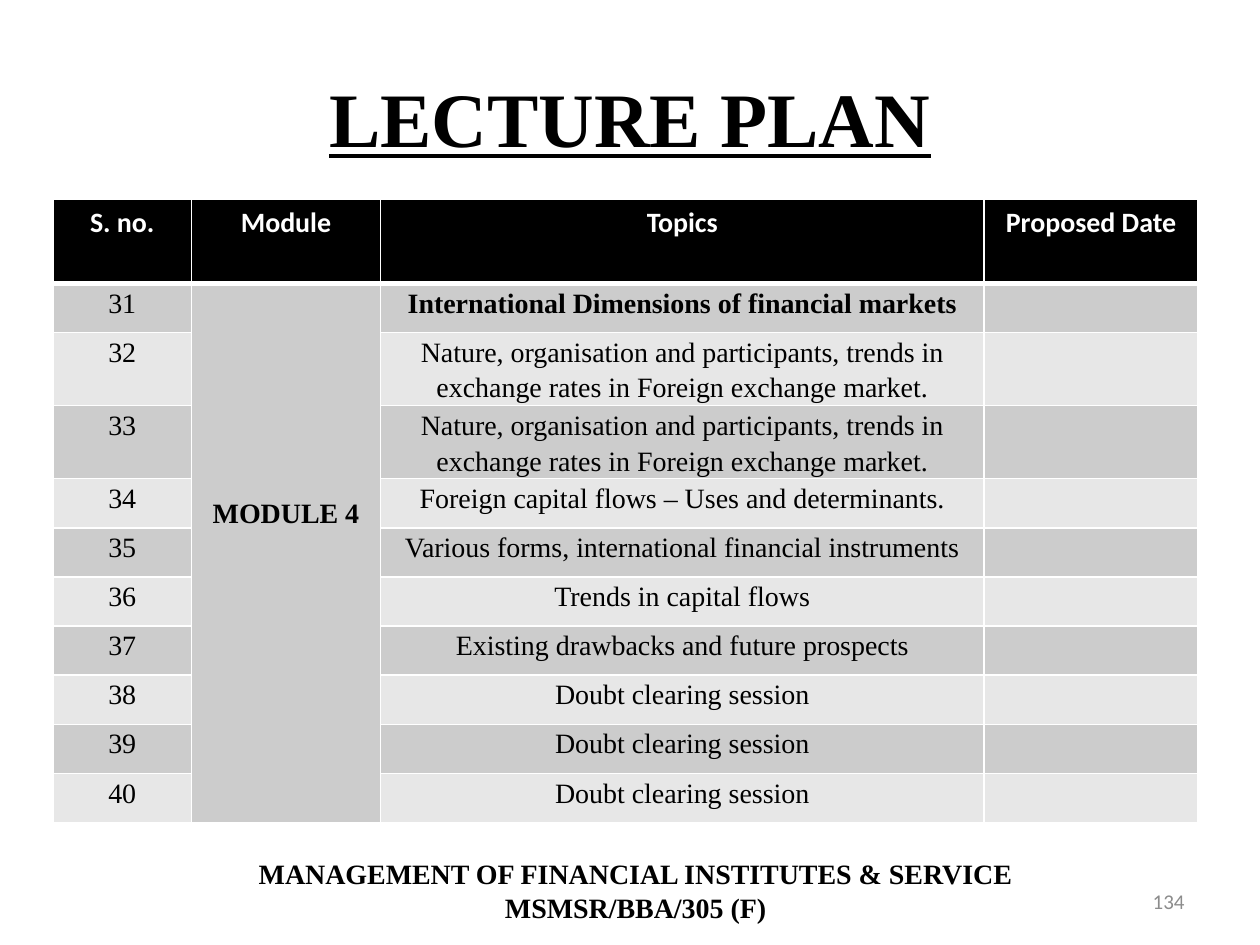
from pptx import Presentation
from pptx.dml.color import RGBColor
from pptx.enum import text
from pptx.oxml import parse_xml
from pptx.oxml.ns import nsdecls
from pptx.util import Inches, Pt

SERIF = "Times New Roman"


def style(para, size, font, color, bold=False, align=text.PP_ALIGN.CENTER):
    para.alignment = align
    for run in para.runs:
        run.font.size = Pt(size)
        run.font.name = font
        run.font.bold = bold
        run.font.color.rgb = RGBColor.from_string(color)


def border(cell, top, bottom):
    """Draw white cell borders; top and bottom widths are in points."""
    for side, width in (("L", 1), ("R", 1), ("T", top), ("B", bottom)):
        cell._tc.get_or_add_tcPr().append(parse_xml(
            f'<a:ln{side} {nsdecls("a")} w="{Pt(width)}"><a:solidFill>'
            f'<a:srgbClr val="FFFFFF"/></a:solidFill></a:ln{side}>'))


prs = Presentation()
prs.slide_width, prs.slide_height = Inches(10), Inches(7.5)
slide = prs.slides.add_slide(prs.slide_layouts[5])

# Title
title = slide.shapes.title
title.left, title.top = Inches(0.5), Inches(0.3)
title.width, title.height = Inches(9), Inches(1.25)
title.text_frame.text = "LECTURE PLAN"
head = title.text_frame.paragraphs[0]
style(head, 44, SERIF, "000000", True)
head.runs[0].font.underline = True

# Lecture table
market = ("Nature, organisation and participants, trends in "
          "exchange rates in Foreign exchange market.")
topics = ["International Dimensions of financial markets", market, market,
          "Foreign capital flows – Uses and determinants.",
          "Various forms, international financial instruments",
          "Trends in capital flows",
          "Existing drawbacks and future prospects"]
topics += ["Doubt clearing session"] * 3
rows = [["S. no.", "Module", "Topics", "Proposed Date"]]
rows += [[str(num), "", topic, ""] for num, topic in enumerate(topics, 31)]
rows[1][1] = "MODULE 4"

table = slide.shapes.add_table(len(rows), 4, Inches(0.42), Inches(1.58),
                               Inches(9.08), Inches(4.95)).table
for col, width in zip(table.columns, (1.1, 1.5, 4.79, 1.7)):
    col.width = Inches(width)
for r, row in enumerate(rows):
    table.rows[r].height = Inches(
        0.67 if r == 0 else 0.58 if row[2] == market else 0.39)
    for c, words in enumerate(row):
        cell = table.cell(r, c)
        border(cell, 3 if r == 1 else 1, 3 if r == 0 else 1)
        cell.fill.solid()
        shade = "000000" if r == 0 else "CCCCCC" if r % 2 else "E7E7E7"
        cell.fill.fore_color.rgb = RGBColor.from_string(shade)
        cell.text_frame.text = words
        para = cell.text_frame.paragraphs[0]
        if r == 0:
            style(para, 16, "Calibri", "FFFFFF", True)
        else:
            style(para, 16, SERIF, "000000", r == 1 and c > 0)
            para.line_spacing = 1.15
            cell.margin_left = cell.margin_right = Inches(0.07)
            cell.margin_top = cell.margin_bottom = 0

module = table.cell(1, 1)
module.merge(table.cell(len(rows) - 1, 1))
module.margin_top = Inches(1.67)

# Course name and page number
course = slide.shapes.add_textbox(Inches(0.84), Inches(6.75),
                                  Inches(8.41), Inches(0.64)).text_frame
course.word_wrap = True
course.text = "MANAGEMENT OF FINANCIAL INSTITUTES & SERVICE\vMSMSR/BBA/305 (F)"
style(course.paragraphs[0], 16, SERIF, "000000", True)

page = slide.shapes.add_textbox(Inches(7.17), Inches(6.95),
                                Inches(2.33), Inches(0.4)).text_frame
page.word_wrap = True
page.vertical_anchor = text.MSO_ANCHOR.MIDDLE
page.text = "134"
style(page.paragraphs[0], 12, "Calibri", "8C8C8C", align=text.PP_ALIGN.RIGHT)

prs.save("out.pptx")
